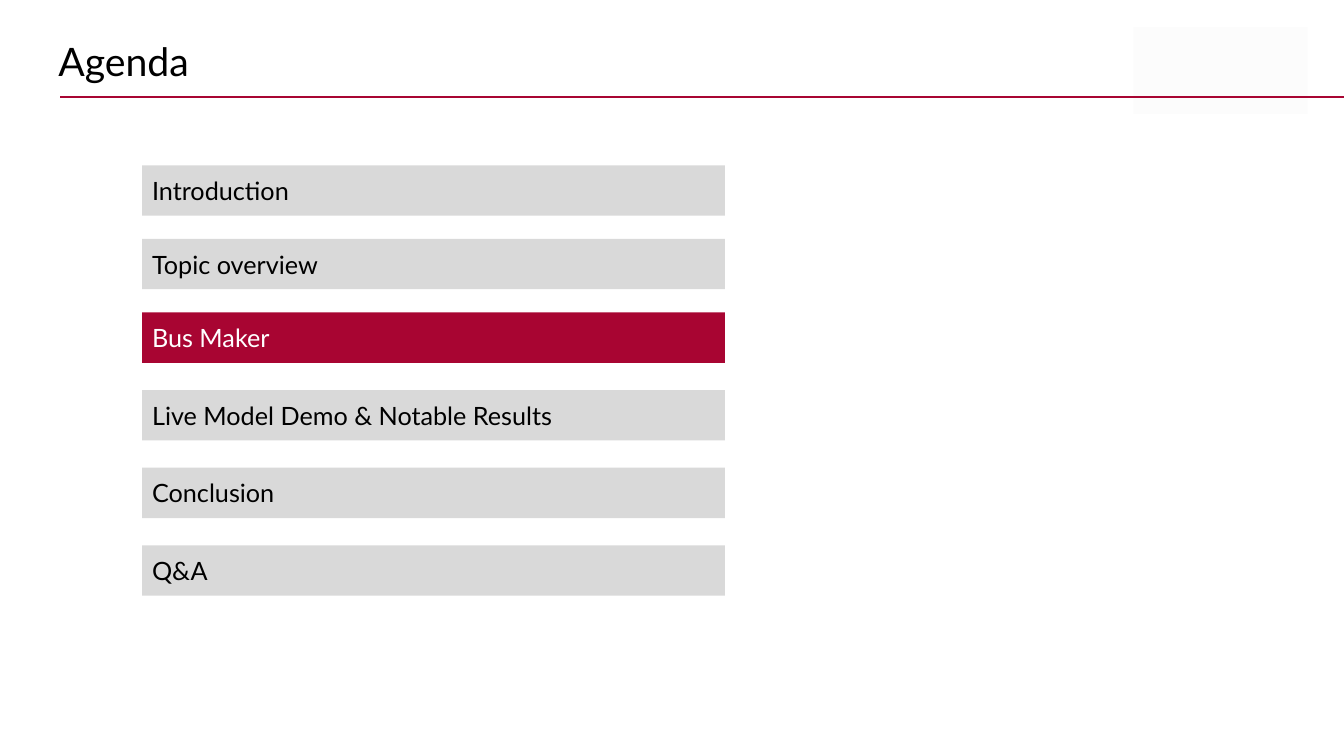
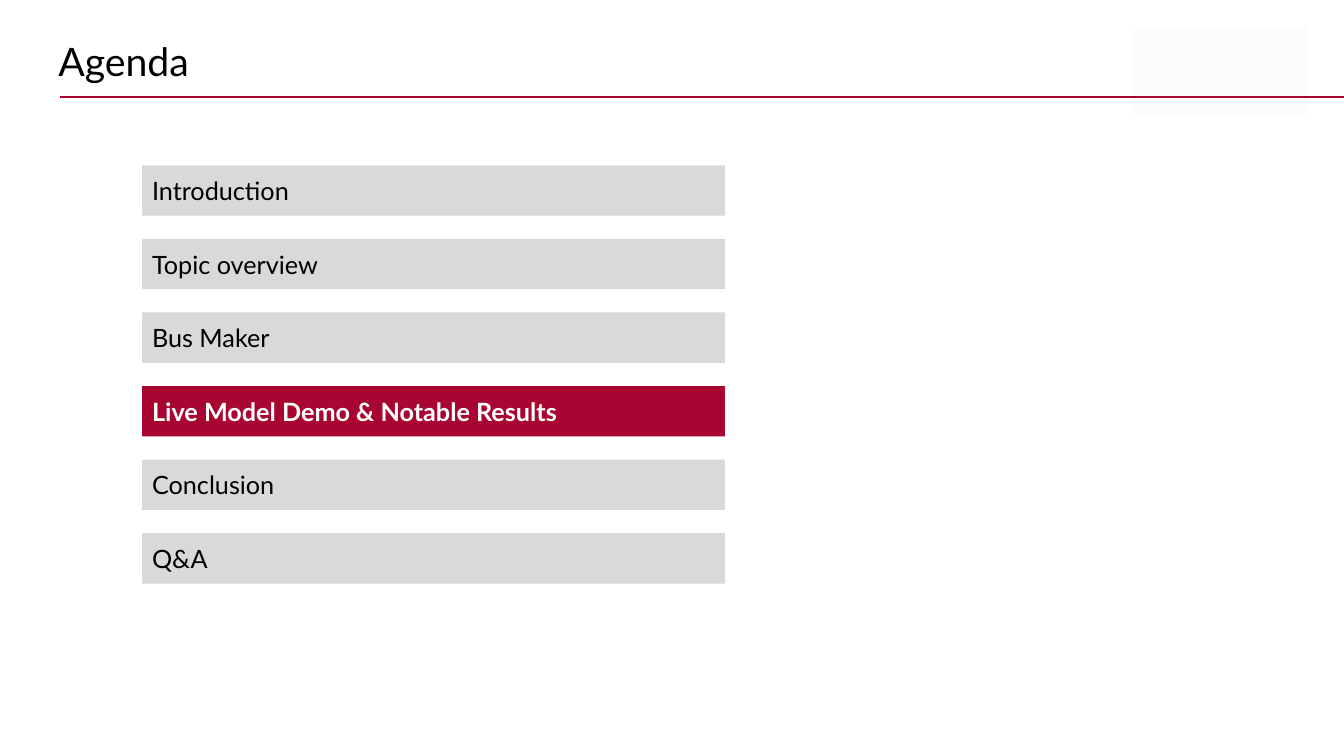
import pptx
import pptx.dml.color
import pptx.enum.shapes
import pptx.enum.text
import pptx.util
from lxml import etree
from pptx.oxml.ns import qn

Inches = pptx.util.Inches
RGBColor = pptx.dml.color.RGBColor
RECTANGLE = pptx.enum.shapes.MSO_SHAPE.RECTANGLE
ANCHOR = pptx.enum.text.MSO_ANCHOR
LEFT = pptx.enum.text.PP_ALIGN.LEFT

CRIMSON = RGBColor(0xA8, 0x05, 0x32)
GREY = RGBColor(0xD9, 0xD9, 0xD9)
PALE = RGBColor(0xFC, 0xFC, 0xFC)
BLACK = RGBColor(0, 0, 0)
WHITE = RGBColor(0xFF, 0xFF, 0xFF)
FONT = "Lato"

SLIDE_W, SLIDE_H = 13.33, 7.5
TITLE_ONLY = 5
TITLE_BOX = (0.48, 0.32, 10.18, 0.57)
EMBLEM_BOX = (11.24, 0.27, 1.73, 0.86)
RULE_LEFT, RULE_TOP = 0.6, 0.96

# Agenda column: the first bar's box and the step from bar to bar
BAR_BOX = (1.41, 1.64, 5.78, 0.5)
BAR_STEP = 0.73

TOPICS = ["Introduction", "Topic overview", "Bus Maker",
          "Live Model Demo & Notable Results", "Conclusion", "Q&A"]


def style_text(frame, size, color, anchor, bold=False):
    frame.word_wrap = True
    frame.vertical_anchor = anchor
    paragraph = frame.paragraphs[0]
    paragraph.alignment = LEFT
    for run in paragraph.runs:
        run.font.name = FONT
        run.font.size = pptx.util.Pt(size)
        run.font.color.rgb = color
        run.font.bold = bold


def add_block(slide, box, fill):
    block = slide.shapes.add_shape(RECTANGLE, *map(Inches, box))
    block.shadow.inherit = False
    block.fill.solid()
    block.fill.fore_color.rgb = fill
    block.line.fill.background()
    return block


def add_header(slide, text):
    # Pale emblem area with the rule running over it
    add_block(slide, EMBLEM_BOX, PALE)
    rule = slide.shapes.add_connector(
        pptx.enum.shapes.MSO_CONNECTOR.STRAIGHT,
        Inches(RULE_LEFT), Inches(RULE_TOP), Inches(SLIDE_W), Inches(RULE_TOP))
    rule.line.color.rgb = CRIMSON
    rule.line.width = pptx.util.Pt(1.5)
    etree.SubElement(rule.element.spPr, qn("a:effectLst"))

    # Title
    title = slide.shapes.title
    title.left, title.top, title.width, title.height = map(Inches, TITLE_BOX)
    title.text_frame.text = text
    title.text_frame.auto_size = pptx.enum.text.MSO_AUTO_SIZE.NONE
    style_text(title.text_frame, 28, BLACK, ANCHOR.TOP)


def add_topics(slide, box, current, step_after, bold):
    """Stack the topic bars; step_after spaces those below the current one."""
    left, top, width, height = box
    for index, topic in enumerate(TOPICS):
        active = index == current
        bar = add_block(slide, (left, top, width, height),
                        CRIMSON if active else GREY)
        bar.text_frame.text = topic
        style_text(bar.text_frame, 18, WHITE if active else BLACK,
                   ANCHOR.MIDDLE, bold and active)
        top += step_after if index >= current else BAR_STEP


def add_agenda_slide(deck, current, step_after=BAR_STEP, bold=False):
    slide = deck.slides.add_slide(deck.slide_layouts[TITLE_ONLY])
    add_header(slide, "Agenda")
    add_topics(slide, BAR_BOX, current, step_after, bold)


def main():
    deck = pptx.Presentation()
    deck.slide_width, deck.slide_height = Inches(SLIDE_W), Inches(SLIDE_H)
    add_agenda_slide(deck, current=2, step_after=0.77)
    add_agenda_slide(deck, current=3, bold=True)
    deck.save("out.pptx")


if __name__ == "__main__":
    main()
